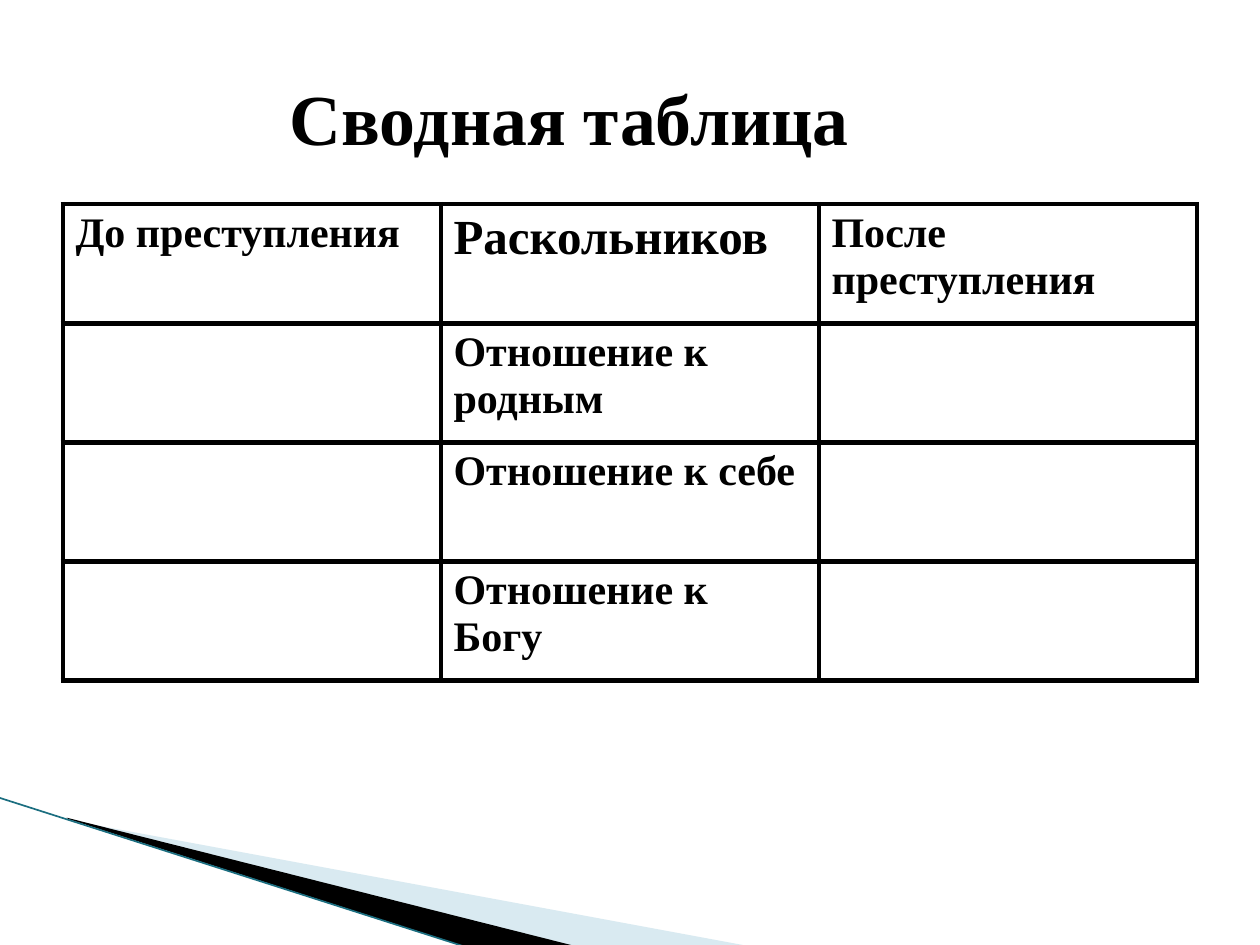
from lxml import etree
from pptx import Presentation
from pptx.dml.color import RGBColor
from pptx.enum.shapes import MSO_CONNECTOR
from pptx.enum.text import MSO_ANCHOR, PP_ALIGN
from pptx.oxml import parse_xml
from pptx.oxml.ns import nsdecls, qn
from pptx.util import Inches, Pt

COLORS = {"text": "000000", "border": "000000", "pale": "A0CBDC",
          "dark": "000000", "edge": "1B6E80"}
FONT = "Times New Roman"
ROWS = [
    ["До преступления", "Раскольников", "После преступления"],
    ["", "Отношение к родным", ""],
    ["", "Отношение к себе", ""],
    ["", "Отношение к Богу", ""],
]


def style_font(font, size):
    font.name, font.size, font.bold = FONT, Pt(size), True
    font.color.rgb = RGBColor.from_string(COLORS["text"])


def add_wedge(page, points, color, alpha=None):
    start, *others = [(Inches(x), Inches(y)) for x, y in points]
    builder = page.shapes.build_freeform(*start)
    builder.add_line_segments(others, close=True)
    wedge = builder.convert_to_shape()
    wedge.shadow.inherit = False
    wedge.fill.solid()
    wedge.fill.fore_color.rgb = RGBColor.from_string(color)
    wedge.line.fill.background()
    if alpha is not None:
        tint = wedge.fill._xPr.find(".//" + qn("a:srgbClr"))
        etree.SubElement(tint, qn("a:alpha")).set("val", str(alpha * 1000))


def add_corner(page, left, top):
    """Wedges and edge line that fan out from the left side."""
    def shift(points):
        return [(left + x, top + y) for x, y in points]

    add_wedge(page, shift([(0.55, 0.18), (5.95, 1.18), (4.56, 1.18), (0.55, 0.17)]),
              COLORS["pale"], alpha=40)
    add_wedge(page, shift([(0.53, 0.16), (4.57, 1.18), (3.72, 1.19), (0.54, 0.17)]),
              COLORS["dark"])
    edge = page.shapes.add_connector(
        MSO_CONNECTOR.STRAIGHT, Inches(left - 0.01), Inches(top),
        Inches(left + 3.71), Inches(top + 1.19))
    edge.line.color.rgb = RGBColor.from_string(COLORS["edge"])
    edge.line.width = Pt(0.95)
    etree.SubElement(edge._element.spPr, qn("a:effectLst"))


def place_title(page, left, top, width, height):
    title = page.shapes.title
    title.left, title.top = Inches(left), Inches(top)
    title.width, title.height = Inches(width), Inches(height)
    frame = title.text_frame
    frame.text = "Сводная таблица"
    frame.vertical_anchor = MSO_ANCHOR.MIDDLE
    frame.margin_left = Inches(1.8)
    para = frame.paragraphs[0]
    para.alignment = PP_ALIGN.LEFT
    style_font(para.font, 41)


def add_borders(cell):
    props = cell._tc.get_or_add_tcPr()
    for position, side in enumerate(("lnL", "lnR", "lnT", "lnB")):
        props.insert(position, parse_xml(
            f'<a:{side} {nsdecls("a")} w="{Pt(3)}"><a:solidFill>'
            f'<a:srgbClr val="{COLORS["border"]}"/></a:solidFill></a:{side}>'))


def add_summary_table(page, left, top, width, height):
    table = page.shapes.add_table(
        len(ROWS), len(ROWS[0]), Inches(left), Inches(top),
        Inches(width), Inches(height)).table
    table.first_row = table.horz_banding = False
    for r, texts in enumerate(ROWS):
        for c, text in enumerate(texts):
            cell = table.cell(r, c)
            cell.fill.background()
            add_borders(cell)
            cell.text = text
            style_font(cell.text_frame.paragraphs[0].font, 28 if (r, c) == (0, 1) else 24)


def main():
    deck = Presentation()
    deck.slide_width, deck.slide_height = Inches(10), Inches(7.5)
    page = deck.slides.add_slide(deck.slide_layouts[5])
    add_corner(page, 0, 6.33)
    add_summary_table(page, 0.5, 1.62, 9, 3.78)
    place_title(page, 0.5, 0.3, 9, 1.25)
    deck.save("out.pptx")


if __name__ == "__main__":
    main()
